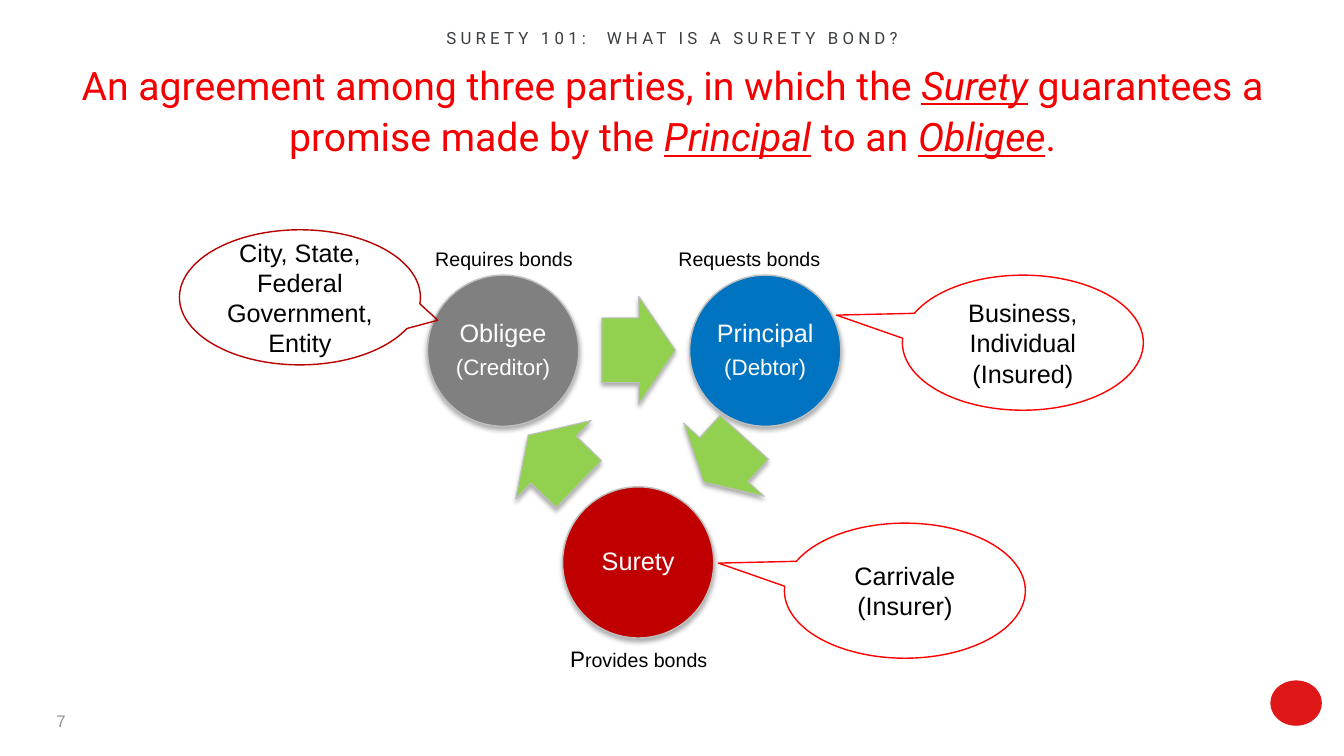
from lxml import etree
from pptx import Presentation, util as u
from pptx.dml.color import RGBColor
from pptx.enum import shapes, text
from pptx.oxml import ns

Inches, Pt = u.Inches, u.Pt
KIND, ALIGN, ANCHOR = shapes.MSO_SHAPE, text.PP_ALIGN, text.MSO_ANCHOR
RED, GREEN, GRAY = "F50002", "92D050", "BFBFBF"

HEADING = "SURETY 101:  WHAT IS A SURETY BOND?"
DEFINITION = [
    ("An agreement among three parties, in which the ", {}),
    ("Surety", {"term": True}),
    (" guarantees a promise made by the ", {}),
    ("Principal", {"term": True}),
    (" to an ", {}),
    ("Obligee", {"term": True}),
    (".", {}),
]
PAGE = "7"
DIAMETER = 1.5
PARTIES = [
    (6.84, 2.73, "0073C1", [[("Principal", {})], [("(Debtor)", {"size": 16})]]),
    (5.58, 4.83, "C00000", [[("Surety", {})]]),
    (4.24, 2.73, "808080", [[("Obligee", {})], [("(Creditor)", {"size": 16})]]),
]
ARROWS = [
    (KIND.LEFT_ARROW, (6.88, 4.02, 0.6, 1.08), 312.3),
    (KIND.LEFT_ARROW, (5.14, 4.02, 0.7, 1.08), 44),
    (KIND.RIGHT_ARROW, (5.97, 2.94, 0.73, 1.07), 0),
]
CAPTIONS = [
    ((6.63, 2.4, 1.93, 0.34), ALIGN.LEFT, [("Requests bonds", {})]),
    ((4.84, 6.35, 2.99, 0.37), ALIGN.CENTER, [("P", {"size": 16}), ("rovides bonds", {})]),
    ((4.19, 2.4, 1.59, 0.34), ALIGN.RIGHT, [("Requires bonds", {})]),
]
CALLOUT_SIZE = (2.39, 1.34)
CALLOUTS = [
    (7.78, 5.19, "FF0000", (-0.774, -0.204), ["Carrivale", "(Insurer)"]),
    (8.95, 2.73, "FF0000", (-0.774, -0.204), ["Business, Individual (Insured)"]),
    (1.78, 2.28, "B80001", (0.572, 0.17), ["City, State, Federal Government, Entity"]),
]

deck = Presentation()
deck.slide_width, deck.slide_height = Inches(13.33), Inches(7.5)
slide = deck.slides.add_slide(deck.slide_layouts[6])


def rgb(value):
    return RGBColor.from_string(value)


def write(holder, paragraphs, size=18, font="Arial", color="000000", align=ALIGN.CENTER,
          anchor=ANCHOR.TOP, inset=None, leading=None, after=None, tracking=None):
    frame = holder.text_frame
    frame.word_wrap = True
    frame.vertical_anchor = anchor
    if inset is not None:
        frame.margin_left = frame.margin_right = Inches(inset)
        frame.margin_top = frame.margin_bottom = Inches(inset)
    for index, pieces in enumerate(paragraphs):
        line = frame.add_paragraph() if index else frame.paragraphs[0]
        line.alignment = align
        if leading is not None:
            line.line_spacing = leading
        if after is not None:
            line.space_after = Pt(after)
        for words, style in pieces:
            run = line.add_run()
            run.text = words
            run.font.name = font
            run.font.size = Pt(style.get("size", size))
            run.font.color.rgb = rgb(color)
            if style.get("term"):
                run.font.italic = run.font.underline = True
            if tracking:
                run.font._element.set("spc", str(tracking * 100))


def textbox(box, paragraphs, **style):
    write(slide.shapes.add_textbox(*map(Inches, box)), paragraphs, **style)


def draw(kind, box, fill=None, line=None, width=1.0, shadow=False):
    shape = slide.shapes.add_shape(kind, *map(Inches, box))
    shape.shadow.inherit = False
    if fill:
        shape.fill.solid()
        shape.fill.fore_color.rgb = rgb(fill)
    else:
        shape.fill.background()
    if line:
        shape.line.color.rgb = rgb(line)
        shape.line.width = Pt(width)
    else:
        shape.line.fill.background()
    if shadow:
        effects = shape._element.spPr.find(ns.qn("a:effectLst"))
        outer = etree.SubElement(effects, ns.qn("a:outerShdw"), blurRad=str(Pt(3.5)),
                                 dist=str(Pt(2.2)), dir="5400000", rotWithShape="0")
        black = etree.SubElement(outer, ns.qn("a:srgbClr"), val="000000")
        etree.SubElement(black, ns.qn("a:alpha"), val="32000")
    return shape


draw(KIND.OVAL, (12.6, 6.75, 0.51, 0.45), fill="E01719")
textbox((0.67, 0.51, 12, 1.34), [DEFINITION], size=28, font="Roboto", color=RED, leading=1.1)
textbox((1.42, 0.23, 10.5, 0.3), [[(HEADING, {})]], size=12, font="Roboto",
        color="3C3F41", tracking=3)
textbox((0.25, 6.95, 0.5, 0.4), [[(PAGE, {})]], size=12, color="929393",
        align=ALIGN.RIGHT, anchor=ANCHOR.MIDDLE)

for left, top, fill, names in PARTIES:
    party = draw(KIND.OVAL, (left, top, DIAMETER, DIAMETER), fill, GRAY, shadow=True)
    write(party, names, color="FFFFFF", anchor=ANCHOR.MIDDLE, inset=0.02, leading=0.9, after=6)

for kind, box, angle in ARROWS:
    arrow = draw(kind, box, GREEN, GRAY, 0.75, shadow=True)
    arrow.adjustments[0], arrow.adjustments[1] = 0.6, 0.5
    arrow.rotation = angle

for box, align, caption in CAPTIONS:
    textbox(box, [caption], size=14, align=align)

for left, top, outline, tail, lines in CALLOUTS:
    callout = draw(KIND.OVAL_CALLOUT, (left, top, *CALLOUT_SIZE), line=outline)
    callout.adjustments[0], callout.adjustments[1] = tail
    write(callout, [[(words, {})] for words in lines], anchor=ANCHOR.MIDDLE)

deck.save("out.pptx")
